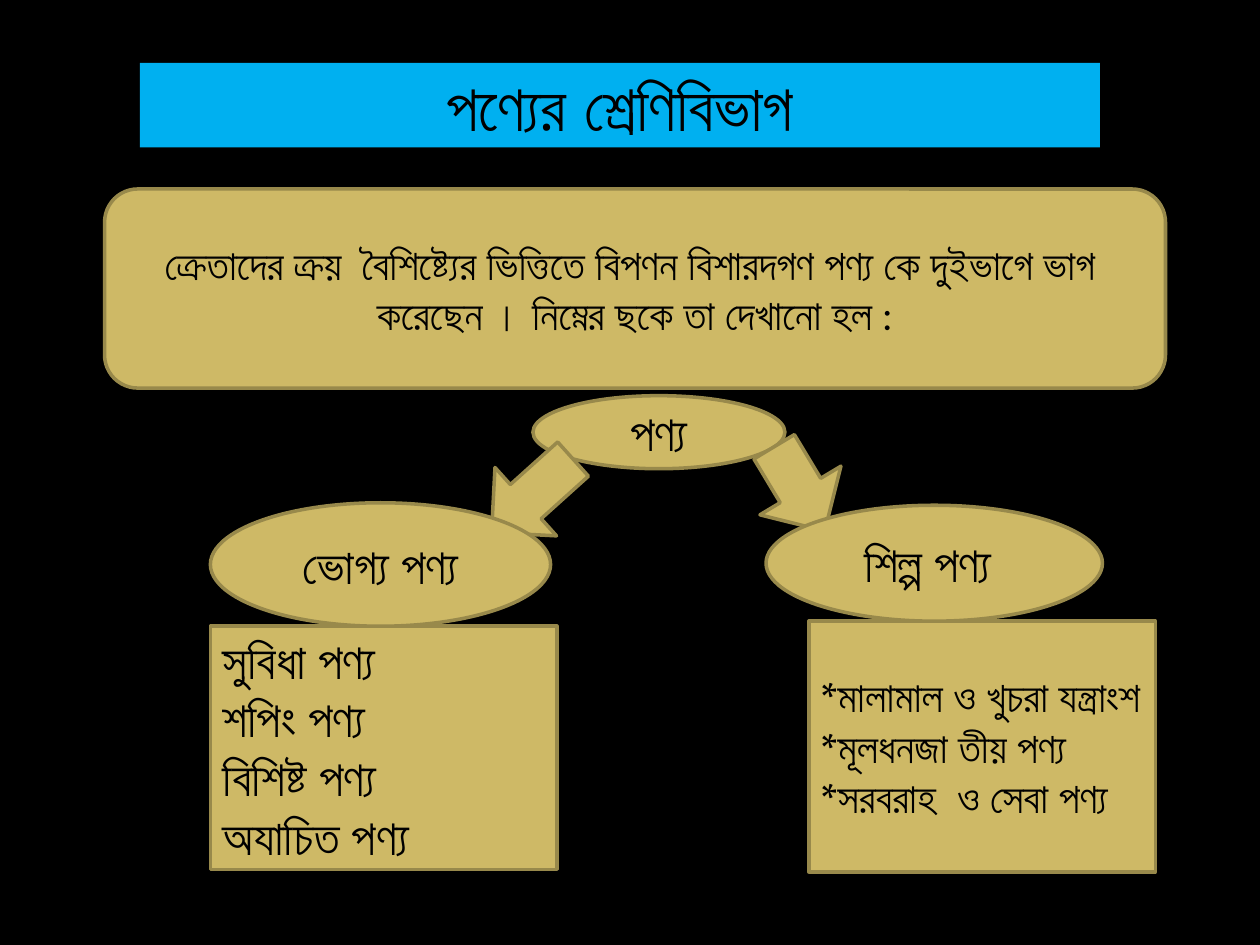
from pptx import Presentation
from pptx.dml.color import RGBColor
from pptx.enum.shapes import MSO_SHAPE
from pptx.enum.text import MSO_ANCHOR, PP_ALIGN
from pptx.util import Inches, Pt

BLACK = RGBColor(0x00, 0x00, 0x00)
BLUE = RGBColor(0x00, 0xB0, 0xF0)
SAND = RGBColor(0xCE, 0xB9, 0x66)
OLIVE = RGBColor(0x98, 0x89, 0x4B)

RECT = MSO_SHAPE.RECTANGLE
ROUNDED = MSO_SHAPE.ROUNDED_RECTANGLE
OVAL = MSO_SHAPE.OVAL
DOWN_ARROW = MSO_SHAPE.DOWN_ARROW
MIDDLE = MSO_ANCHOR.MIDDLE
LEFT, CENTER = PP_ALIGN.LEFT, PP_ALIGN.CENTER

HEADING_FONT = {"name": "Open Sans", "size": Pt(36.9), "bold": True}
BODY_FONT = {"name": "TeX Gyre Pagella", "size": Pt(24)}
LABEL_FONT = {"name": "TeX Gyre Pagella", "size": Pt(28)}


def add_panel(slide, kind, box, fill=SAND, outline=OLIVE):
    panel = slide.shapes.add_shape(kind, *map(Inches, box))
    panel.shadow.inherit = False
    panel.fill.solid()
    panel.fill.fore_color.rgb = fill
    if outline is None:
        panel.line.fill.background()
    else:
        panel.line.color.rgb = outline
        panel.line.width = Pt(2)
    return panel


def write(panel, lines, font_format, align=CENTER):
    frame = panel.text_frame
    frame.word_wrap = True
    frame.vertical_anchor = MIDDLE
    for index, line in enumerate(lines):
        paragraph = frame.add_paragraph() if index else frame.paragraphs[0]
        paragraph.alignment = align
        run = paragraph.add_run()
        run.text = line
        for attribute, value in font_format.items():
            setattr(run.font, attribute, value)
        run.font.color.rgb = BLACK


def add_heading(slide, box):
    banner = add_panel(slide, RECT, box, BLUE, None)
    write(banner, ["পণ্যের শ্রেণিবিভাগ"], HEADING_FONT)


def add_introduction(slide, box):
    introduction = add_panel(slide, ROUNDED, box)
    write(introduction, ["ক্রেতাদের ক্রয়  বৈশিষ্ট্যের ভিত্তিতে বিপণন বিশারদগণ পণ্য কে "
                         "দুইভাগে ভাগ  করেছেন । নিম্নের ছকে তা দেখানো হল :"], BODY_FONT)


def add_root(slide, box):
    write(add_panel(slide, OVAL, box), ["পণ্য"], LABEL_FONT)


def add_branch(slide, box, label, label_size, items, items_size, items_font,
               arrow, rotation):
    """Arrow, label oval at the left edge, and item list in the bottom right corner.

    The arrow is (left, top, width, height), measured from the branch's corner.
    """
    left, top, width, height = box
    label_width, label_height = label_size
    items_width, items_height = items_size
    arrow_left, arrow_top, arrow_width, arrow_height = arrow

    items_top = top + height - items_height
    item_list = add_panel(slide, RECT, (left + width - items_width, items_top,
                                        items_width, items_height))
    write(item_list, items, items_font, LEFT)

    pointer = add_panel(slide, DOWN_ARROW, (left + arrow_left, top + arrow_top,
                                            arrow_width, arrow_height))
    pointer.rotation = rotation

    label_oval = add_panel(slide, OVAL, (left, items_top - label_height,
                                         label_width, label_height))
    write(label_oval, [label], LABEL_FONT)


def main():
    presentation = Presentation()
    presentation.slide_width = Inches(10)
    presentation.slide_height = Inches(7.5)
    slide = presentation.slides.add_slide(presentation.slide_layouts[6])
    slide.background.fill.solid()
    slide.background.fill.fore_color.rgb = BLACK

    add_heading(slide, (1.11, 0.5, 7.62, 0.67))
    add_introduction(slide, (0.83, 1.5, 8.42, 1.58))
    add_root(slide, (4.23, 3.14, 2, 0.58))
    add_branch(slide, (1.67, 3.5, 2.75, 3.4), "ভোগ্য পণ্য", (2.7, 0.98),
               ["সুবিধা পণ্য", "শপিং পণ্য", "বিশিষ্ট পণ্য", "অযাচিত পণ্য"],
               (2.75, 1.93), LABEL_FONT, (2.19, 0, 0.73, 0.87), 48)
    add_branch(slide, (6.08, 3.49, 3.09, 3.43), "শিল্প পণ্য ", (2.67, 0.92),
               ["*মালামাল ও খুচরা যন্ত্রাংশ", "*মূলধনজা তীয় পণ্য",
                "*সরবরাহ  ও সেবা পণ্য"],
               (2.75, 1.99), BODY_FONT, (-0.11, 0, 0.75, 0.78), 329)

    presentation.save("out.pptx")


if __name__ == "__main__":
    main()
